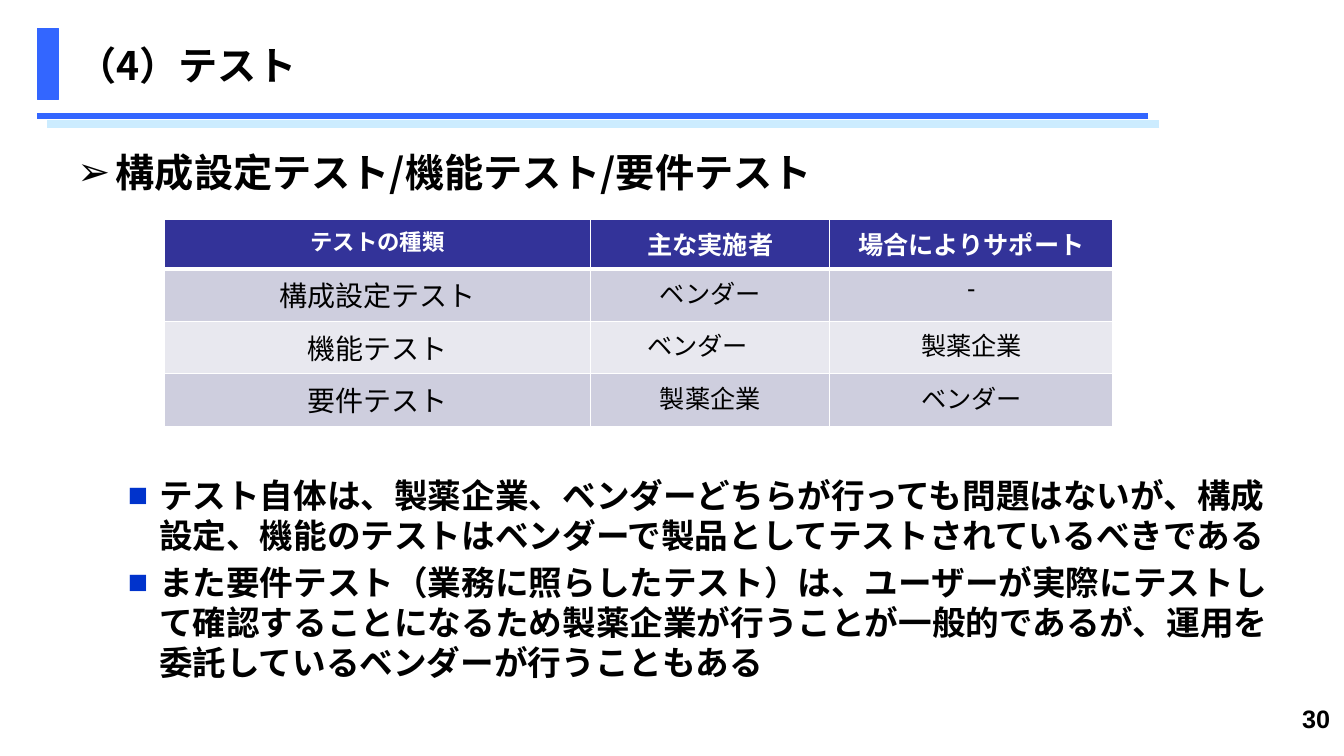
from lxml.etree import SubElement as Sub
from pptx import Presentation
from pptx.dml.color import RGBColor
from pptx.enum.shapes import MSO_CONNECTOR as Conn, MSO_SHAPE as Kind
from pptx.enum.text import MSO_ANCHOR as Anchor, PP_ALIGN as Align
from pptx.oxml.ns import qn
from pptx.util import Inches, Pt

BLACK = RGBColor(0x00, 0x00, 0x00)
WHITE = RGBColor(0xFF, 0xFF, 0xFF)
BLUE = RGBColor(0x33, 0x66, 0xFF)
PALE = RGBColor(0xCC, 0xEC, 0xFF)
MARK = RGBColor(0x00, 0x33, 0xCC)
NAVY = RGBColor(0x33, 0x33, 0x99)
LILAC = RGBColor(0xCE, 0xCE, 0xDE)
MIST = RGBColor(0xE8, 0xE8, 0xEF)
GOTHIC = "Noto Sans CJK JP"

ROWS = [
    ["テストの種類", "主な実施者", "場合によりサポート"],
    ["構成設定テスト", "ベンダー", "-"],
    ["機能テスト", "ベンダー\u3000".replace("\u3000", "　"), "製薬企業"],
    ["要件テスト", "製薬企業", "ベンダー"],
]
POINTS = [
    "テスト自体は、製薬企業、ベンダーどちらが行っても問題はないが、構成設定、機能のテストはベンダーで製品としてテストされているべきである",
    "また要件テスト（業務に照らしたテスト）は、ユーザーが実際にテストして確認することになるため製薬企業が行うことが一般的であるが、運用を委託しているベンダーが行うこともある",
]


def style(para, size, color=BLACK, bold=True, face=GOTHIC):
    for run in para.runs:
        font = run.font
        font.size, font.bold, font.name = Pt(size), bold, face
        font.color.rgb = color
        Sub(run._r.get_or_add_rPr(), qn("a:ea"), typeface=GOTHIC)


def add_box(slide, left, top, width, height):
    box = slide.shapes.add_textbox(
        Inches(left), Inches(top), Inches(width), Inches(height))
    frame = box.text_frame
    frame.word_wrap = True
    return frame


def add_rule(slide, left, right, y, color, width):
    rule = slide.shapes.add_connector(
        Conn.STRAIGHT, Inches(right), Inches(y), Inches(left), Inches(y))
    rule.line.color.rgb = color
    rule.line.width = Pt(width)
    Sub(rule._element.spPr, qn("a:effectLst"))


def add_bar(slide):
    bar = slide.shapes.add_shape(
        Kind.RECTANGLE, Inches(0.37), Inches(0.28), Inches(0.21), Inches(0.71))
    bar.shadow.inherit = False
    bar.fill.solid()
    bar.fill.fore_color.rgb = BLUE
    bar.line.color.rgb = BLUE
    bar.line.width = Pt(0.75)


def set_item(para, text, size, pitch, left, hang, mark, color):
    para.text = text
    para.line_spacing = Pt(pitch)
    props = para._p.get_or_add_pPr()
    props.set("marL", str(Inches(left)))
    props.set("indent", str(-Inches(hang)))
    tint = Sub(props, qn("a:buClr"))
    Sub(tint, qn("a:srgbClr"), val=str(color))
    Sub(props, qn("a:buFont"), typeface="Arial")
    Sub(props, qn("a:buChar"), char=mark)
    style(para, size)


def add_body(slide):
    frame = add_box(slide, 0.67, 1.39, 12, 6.06)
    set_item(frame.paragraphs[0], "構成設定テスト/機能テスト/要件テスト",
             28, 35.8, 0.38, 0.38, "➢", BLACK)
    for text, gap in zip(POINTS, (200, 4.8)):
        para = frame.add_paragraph()
        para.space_before = Pt(gap)
        set_item(para, text, 24, 28.6, 0.81, 0.31, "■", MARK)


def set_edges(cell, top, bottom):
    props = cell._tc.get_or_add_tcPr()
    for tag, width in (("lnL", 1), ("lnR", 1), ("lnT", top), ("lnB", bottom)):
        edge = Sub(props, qn(f"a:{tag}"), w=str(Pt(width)))
        Sub(Sub(edge, qn("a:solidFill")), qn("a:srgbClr"), val=str(WHITE))


def add_grid(slide):
    grid = slide.shapes.add_table(
        4, 3, Inches(1.63), Inches(2.18), Inches(9.41), Inches(2.05)).table
    for col, width in zip(grid.columns, (4.23, 2.37, 2.81)):
        col.width = Inches(width)
    for i, texts in enumerate(ROWS):
        head = i == 0
        grid.rows[i].height = Inches(0.49 if head else 0.52)
        for j, text in enumerate(texts):
            cell = grid.cell(i, j)
            cell.text = text
            para = cell.text_frame.paragraphs[0]
            para.alignment = Align.CENTER
            size = 18 if j else 16 if head else 20
            style(para, size, WHITE if head else BLACK, head, "Arial")
            set_edges(cell, 3 if i == 1 else 1, 3 if head else 1)
            cell.fill.solid()
            cell.fill.fore_color.rgb = NAVY if head else LILAC if i % 2 else MIST


def main():
    deck = Presentation()
    deck.slide_width, deck.slide_height = Inches(13.33), Inches(7.5)
    slide = deck.slides.add_slide(deck.slide_layouts[6])
    add_rule(slide, 0.37, 11.39, 1.15, BLUE, 4.5)
    add_bar(slide)
    add_rule(slide, 0.47, 11.5, 1.23, PALE, 6)

    title = add_box(slide, 0.67, 0.21, 12, 0.87)
    title.vertical_anchor = Anchor.MIDDLE
    title.text = "（4）テスト"
    style(title.paragraphs[0], 28)

    page = add_box(slide, 12.01, 6.93, 1.28, 0.52)
    page.text = "30"
    page.paragraphs[0].alignment = Align.RIGHT
    style(page.paragraphs[0], 18, face="Arial")

    add_body(slide)
    add_grid(slide)
    deck.save("out.pptx")


if __name__ == "__main__":
    main()
